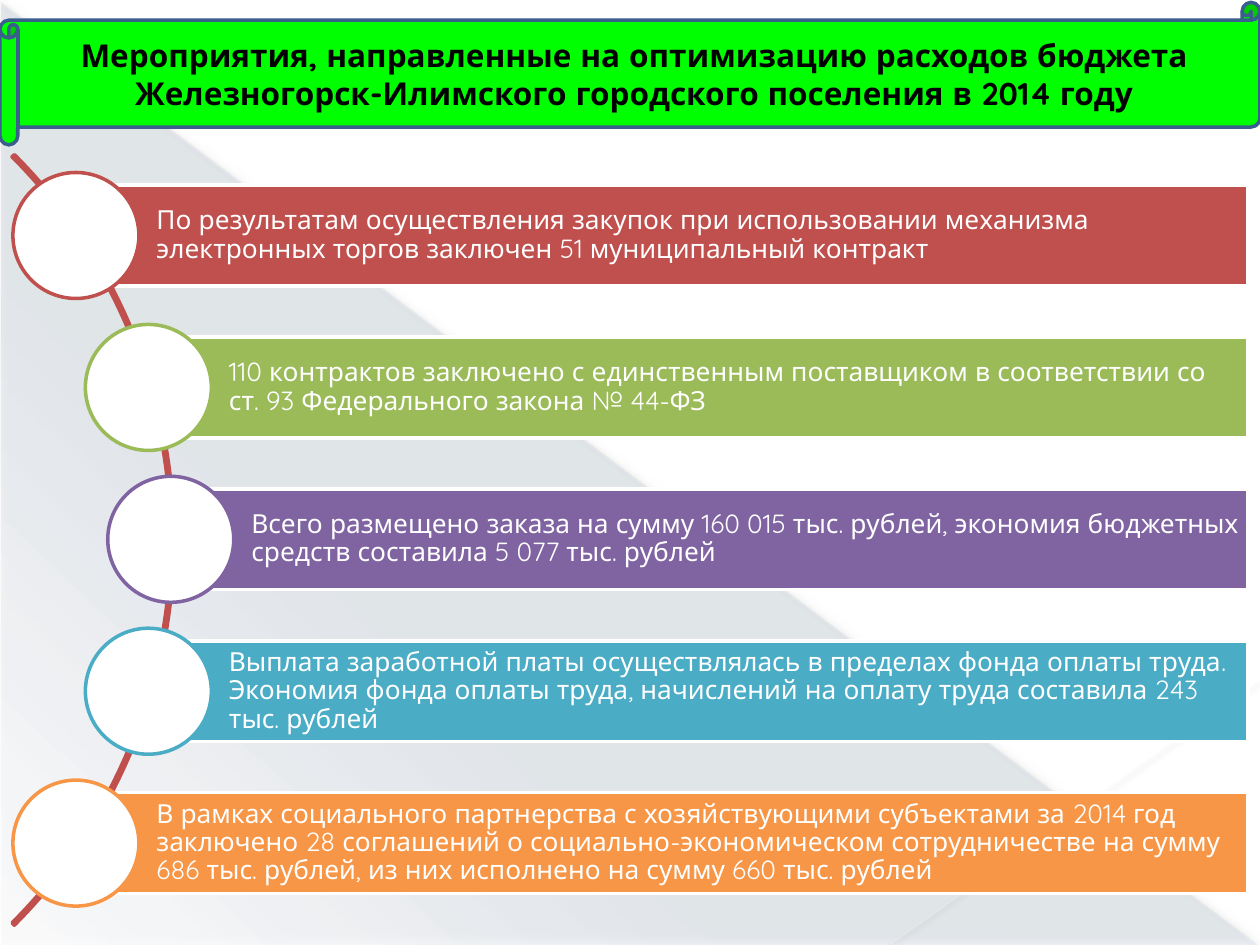
from dataclasses import dataclass

from lxml.etree import SubElement
from pptx import Presentation
from pptx.dml.color import RGBColor as Rgb
from pptx.enum.shapes import MSO_CONNECTOR as Connector, MSO_SHAPE as Shape
from pptx.enum.text import MSO_ANCHOR as Anchor, PP_ALIGN as Align
from pptx.oxml.ns import qn
from pptx.util import Pt

COLORS = {
    "white": "FFFFFF", "black": "000000", "green": "00FF00", "scroll_edge": "3A5F8C",
    "navy": "1F497D", "cream": "F9F7EC", "ivory": "FAF8EE", "red": "C0504D",
    "olive": "9BBB59", "purple": "8064A2", "teal": "4BACC6", "orange": "F79646",
}
FONT = "Quicksand"
TITLE = ("Мероприятия, направленные на оптимизацию расходов бюджета "
         "Железногорск-Илимского городского поселения в 2014 году")
BAR_RIGHT, BAR_TOP, BAR_HEIGHT, BAR_STEP = 713.2, 105.8, 57.6, 86.8
CIRCLE = 72


@dataclass
class Measure:
    text: str
    color: str
    left: float


@dataclass
class Shadow:
    alpha: int
    blur: float
    distance: float
    angle: int


@dataclass
class Ray:
    start: tuple[float, float]
    end: tuple[float, float]
    color: str
    width: float
    alpha: int


MEASURES = [
    Measure("По результатам осуществления закупок при использовании механизма "
            "электронных торгов заключен 51 муниципальный контракт", "red", 43.4),
    Measure("110 контрактов заключено с единственным поставщиком в соответствии со "
            "ст. 93 Федерального закона № 44-ФЗ", "olive", 84.8),
    Measure("Всего размещено заказа на сумму 160 015 тыс. рублей, экономия бюджетных "
            "средств составила 5 077 тыс. рублей", "purple", 97.6),
    Measure("Выплата заработной платы осуществлялась в пределах фонда оплаты труда. "
            "Экономия фонда оплаты труда, начислений на оплату труда составила 243 "
            "тыс. рублей", "teal", 84.8),
    Measure("В рамках социального партнерства с хозяйствующими субъектами за 2014 год "
            "заключено 28 соглашений о социально-экономическом сотрудничестве на сумму "
            "686 тыс. рублей, из них исполнено на сумму 660 тыс. рублей", "orange", 43.4),
]
RAYS = [
    Ray((0, 0.7), (719.3, 539.3), "cream", 0.4, 35),
    Ray((720, 389.5), (509, 539.3), "ivory", 0.48, 45),
]


def rgb(name: str) -> Rgb:
    return Rgb.from_string(COLORS[name])


def set_all(target, values: dict) -> None:
    for name, value in values.items():
        setattr(target, name, value)


def add_node(parent, tag: str, **attributes):
    return SubElement(parent, qn(tag), {key: str(value) for key, value in attributes.items()})


def add_color(parent, name: str, alpha: int) -> None:
    color = add_node(parent, "a:srgbClr", val=COLORS[name])
    add_node(color, "a:alpha", val=alpha * 1000)


def add_shadow(shape, shadow: Shadow) -> None:
    effects = add_node(shape._element.spPr, "a:effectLst")
    outer = add_node(effects, "a:outerShdw", blurRad=int(Pt(shadow.blur)),
                     dist=int(Pt(shadow.distance)), dir=shadow.angle * 60000,
                     algn="ctr", rotWithShape=0)
    add_color(outer, "black", shadow.alpha)


def add_shape(page, kind, box: tuple, fill: str | None, edge: str):
    shape = page.shapes.add_shape(kind, *map(Pt, box))
    shape.shadow.inherit = False
    if fill:
        shape.fill.solid()
        shape.fill.fore_color.rgb = rgb(fill)
    else:
        shape.fill.background()
    shape.line.color.rgb = rgb(edge)
    shape.line.width = Pt(2)
    return shape


def write_text(shape, text: str, frame_format: dict, para_format: dict, font_format: dict,
               color: str) -> None:
    frame = shape.text_frame
    set_all(frame, {"word_wrap": True, "vertical_anchor": Anchor.MIDDLE} | frame_format)
    para = frame.paragraphs[0]
    set_all(para, para_format)
    span = para.add_run()
    span.text = text
    set_all(span.font, {"name": FONT} | font_format)
    span.font.color.rgb = rgb(color)


def draw_backdrop(page) -> None:
    triangle = page.shapes.add_shape(Shape.RIGHT_TRIANGLE, *map(Pt, (0.7, 1.4, 718.6, 538.6)))
    triangle.line.fill.background()
    properties = triangle._element.spPr
    gradient = add_node(properties, "a:gradFill", rotWithShape=1)
    properties.find(qn("a:prstGeom")).addnext(gradient)
    stops = add_node(gradient, "a:gsLst")
    for position, alpha in ((0, 10), (70, 8), (100, 1)):
        add_color(add_node(stops, "a:gs", pos=position * 1000), "navy", alpha)
    add_node(gradient, "a:lin", ang=133 * 60000, scaled=0)
    add_shadow(triangle, Shadow(50, 5, 2, 245))
    for ray in RAYS:
        line = page.shapes.add_connector(Connector.STRAIGHT, *map(Pt, ray.start + ray.end))
        line.line.color.rgb = rgb(ray.color)
        line.line.width = Pt(ray.width)
        color = line._element.spPr.find(".//" + qn("a:srgbClr"))
        add_node(color, "a:alpha", val=ray.alpha * 1000)
        add_shadow(line, Shadow(38, 3.1, 1.6, 90))


def draw_title(page) -> None:
    add_shape(page, Shape.HORIZONTAL_SCROLL, (0, 1.4, 720, 81.4), "green", "scroll_edge")
    title = page.shapes.title
    box = {"left": 10.2, "top": 11.6, "width": 704.7, "height": 61}
    set_all(title, {name: Pt(value) for name, value in box.items()})
    page.shapes._spTree.append(title._element)
    write_text(title, TITLE, {}, {"alignment": Align.CENTER},
               {"size": Pt(18), "bold": True}, "black")


def draw_measure(page, measure: Measure, top: float) -> None:
    bar = add_shape(page, Shape.RECTANGLE,
                    (measure.left, top, BAR_RIGHT - measure.left, BAR_HEIGHT),
                    measure.color, "white")
    margins = {"margin_left": Pt(46), "margin_right": Pt(3),
               "margin_top": Pt(3), "margin_bottom": Pt(3)}
    write_text(bar, measure.text, margins, {"alignment": Align.LEFT, "line_spacing": 0.9},
               {"size": Pt(15)}, "white")
    add_shape(page, Shape.OVAL,
              (measure.left - CIRCLE / 2, top - (CIRCLE - BAR_HEIGHT) / 2, CIRCLE, CIRCLE),
              "white", measure.color)


def main() -> None:
    deck = Presentation()
    set_all(deck, {"slide_width": Pt(720), "slide_height": Pt(540)})
    page = deck.slides.add_slide(deck.slide_layouts[5])
    draw_backdrop(page)
    draw_title(page)
    arc = add_shape(page, Shape.BLOCK_ARC, (-523.4, -2.9, 622.8, 622.8), None, "red")
    for index, value in enumerate((189, 27, 0.003)):
        arc.adjustments[index] = value
    for index, measure in enumerate(MEASURES):
        draw_measure(page, measure, BAR_TOP + index * BAR_STEP)
    deck.save("out.pptx")


if __name__ == "__main__":
    main()
